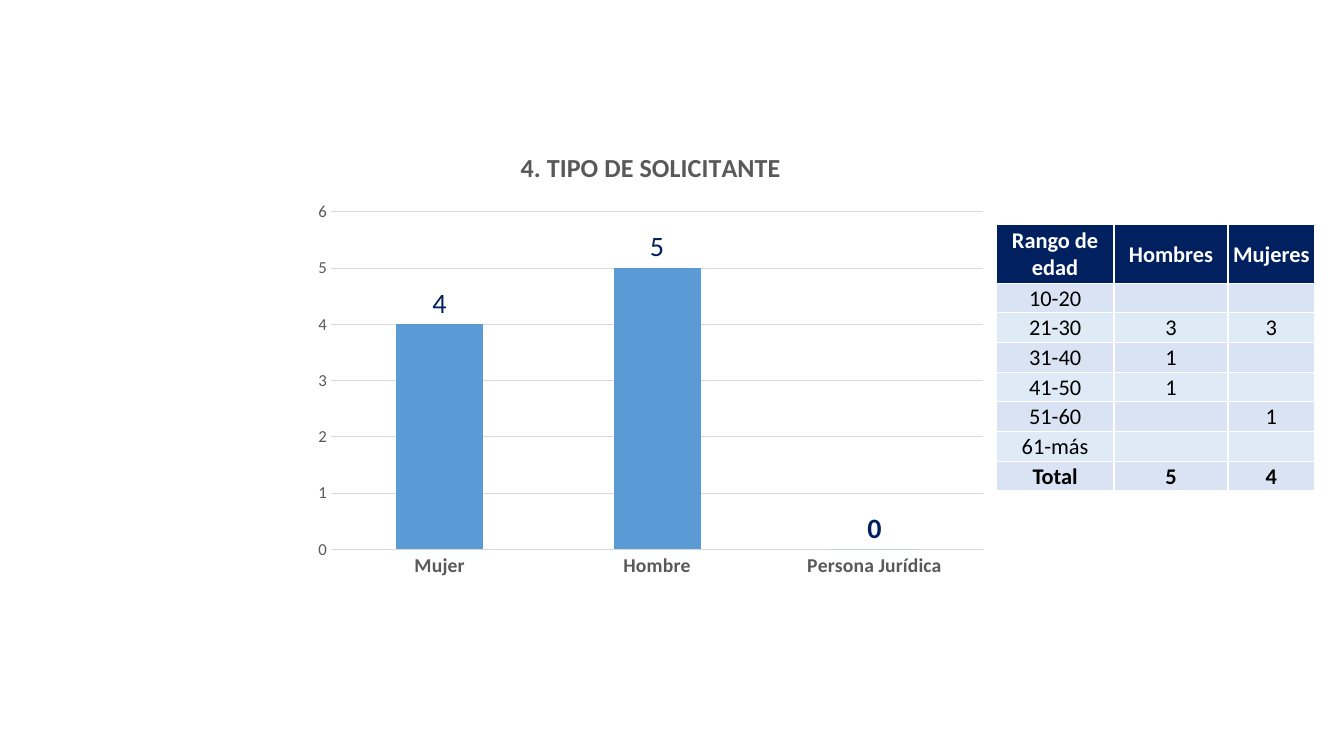
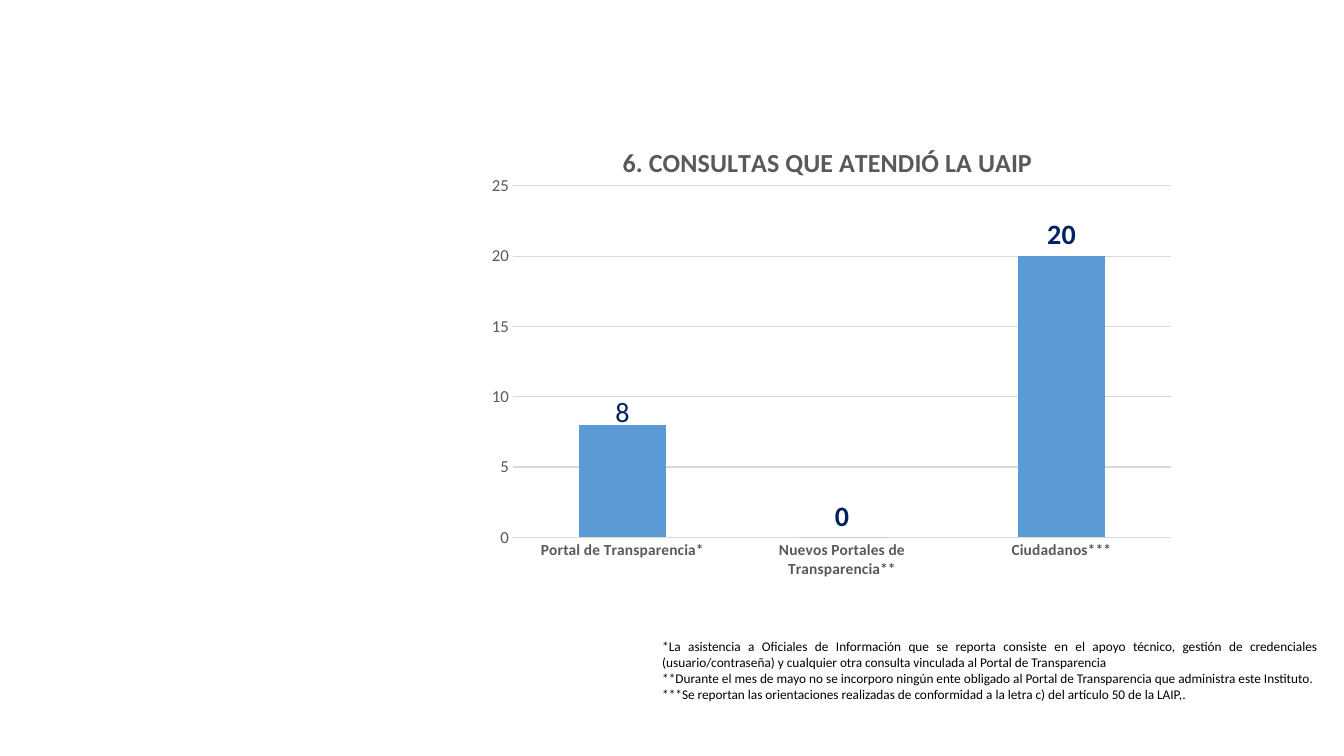
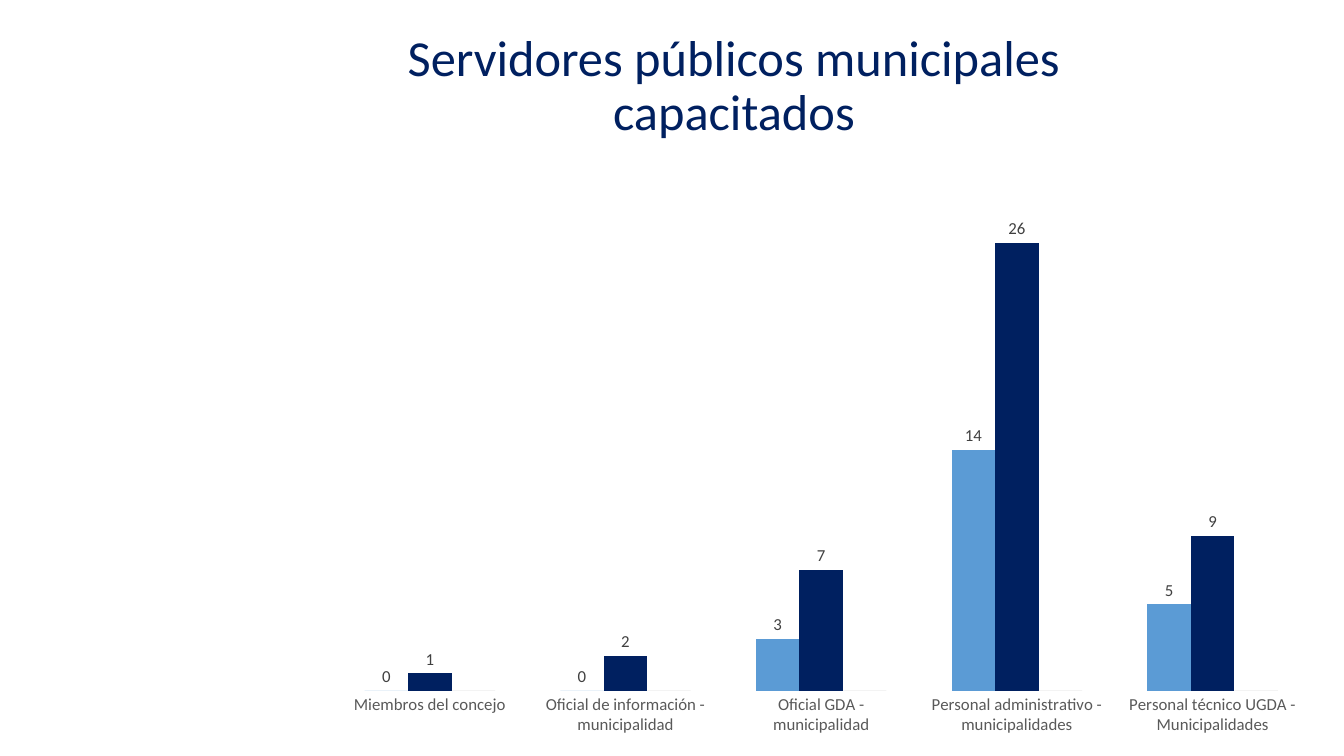
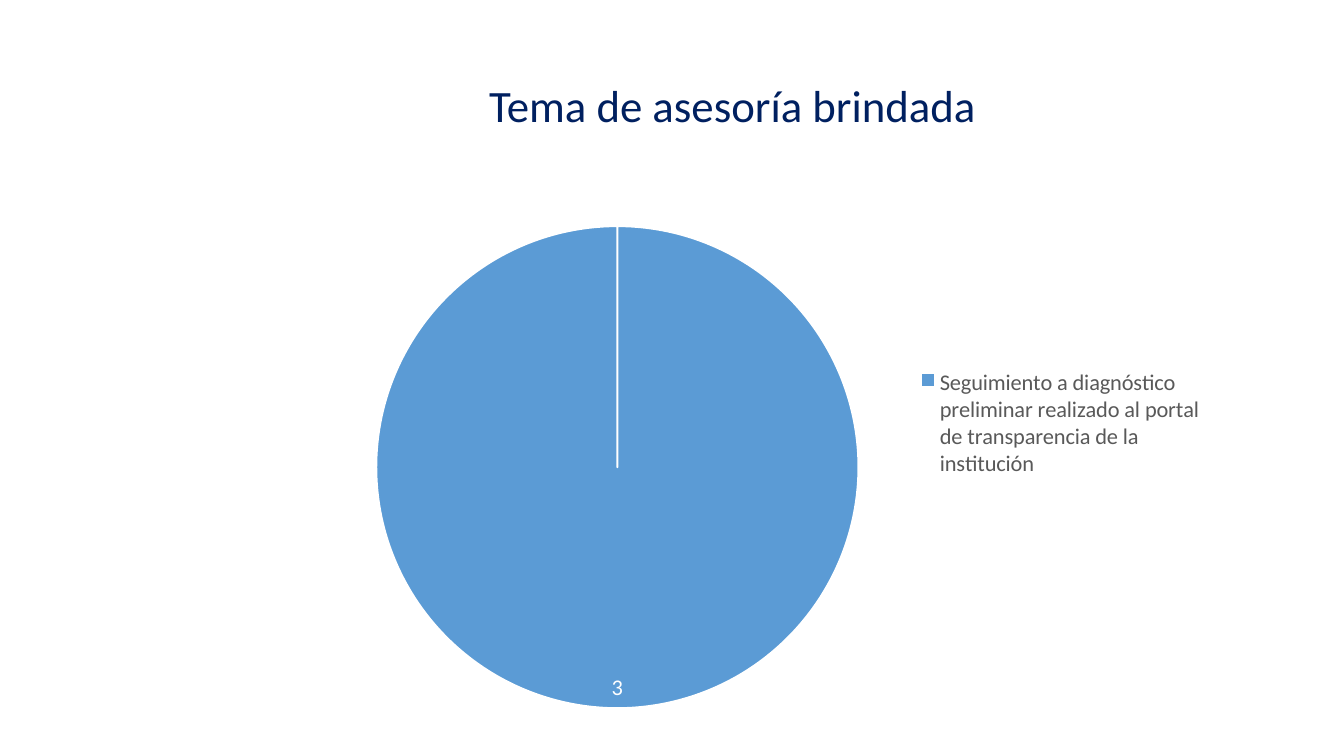
from pptx import Presentation
from pptx.chart.data import CategoryChartData
from pptx.dml.color import RGBColor
from pptx.enum.chart import XL_CHART_TYPE, XL_LABEL_POSITION, XL_LEGEND_POSITION, XL_TICK_MARK
from pptx.enum.text import MSO_ANCHOR, PP_ALIGN
from pptx.oxml import parse_xml
from pptx.oxml.ns import nsdecls, qn
from pptx.util import Inches, Pt

COLUMN = XL_CHART_TYPE.COLUMN_CLUSTERED
PIE = XL_CHART_TYPE.PIE
OUTSIDE = XL_LABEL_POSITION.OUTSIDE_END
BEST_FIT = XL_LABEL_POSITION.BEST_FIT
RIGHT = XL_LEGEND_POSITION.RIGHT
NO_TICK = XL_TICK_MARK.NONE
CENTER = PP_ALIGN.CENTER
JUSTIFY = PP_ALIGN.JUSTIFY
TOP = MSO_ANCHOR.TOP
MIDDLE = MSO_ANCHOR.MIDDLE

FONT = "Calibri"
COLORS = {
    "navy": "002060", "blue": "5B9BD5", "neutral": "A5A5A5", "gray": "595959",
    "dark": "404040", "grid": "D9D9D9", "black": "000000", "white": "FFFFFF",
    "odd_row": "DAE3F3", "even_row": "DEEBF7",
}


class Deck:
    """Holds the shared style and the slide being built."""

    def __init__(self):
        self.presentation = Presentation()
        self.presentation.slide_width = Inches(13.33)
        self.presentation.slide_height = Inches(7.5)
        self.slide = None

    def new_slide(self):
        self.slide = self.presentation.slides.add_slide(self.presentation.slide_layouts[6])

    def color(self, name):
        return RGBColor.from_string(COLORS[name])

    def fill(self, target, name):
        target.fill.solid()
        target.fill.fore_color.rgb = self.color(name)

    def style_font(self, font, size, color, bold=False):
        for key, value in {"name": FONT, "size": Pt(size), "bold": bold}.items():
            setattr(font, key, value)
        font.color.rgb = self.color(color)

    def text(self, box, lines, size, color, align, anchor=TOP, spacing=None):
        frame = self.slide.shapes.add_textbox(*map(Inches, box)).text_frame
        frame.word_wrap = True
        frame.vertical_anchor = anchor
        for index, line in enumerate(lines):
            paragraph = frame.add_paragraph() if index else frame.paragraphs[0]
            paragraph.alignment = align
            paragraph.line_spacing = spacing
            run = paragraph.add_run()
            run.text = line
            self.style_font(run.font, size, color)

    def title(self, box, text, size):
        self.text(box, [text], size, "navy", CENTER, MIDDLE, 0.9)

    def chart(self, kind, box, categories, series):
        data = CategoryChartData()
        data.categories = categories
        for name, values in series:
            data.add_series(name, values)
        chart = self.slide.shapes.add_chart(kind, *map(Inches, box), data).chart
        self.style_font(chart.font, 10, "black")
        chart.has_title = False
        chart.has_legend = False
        return chart

    def labels(self, target, size, color, position, bold=False):
        labels = target.data_labels
        labels.show_value = True
        labels.position = position
        self.style_font(labels.font, size, color, bold)

    def place(self, parent, index, layout):
        previous = parent.find(qn("c:layout"))
        if previous is not None:
            parent.remove(previous)
        values = "".join(f'<c:{key} val="{value}"/>' for key, value in layout.items())
        parent.insert(index, parse_xml(
            f'<c:layout {nsdecls("c")}><c:manualLayout>{values}</c:manualLayout></c:layout>'))

    def place_plot(self, chart, box):
        modes = {"layoutTarget": "inner", "xMode": "edge", "yMode": "edge"}
        self.place(chart._chartSpace.chart.plotArea, 0, modes | dict(zip("xywh", box)))

    def columns(self, box, categories, series, colors, category_size, top, unit, bold=False):
        chart = self.chart(COLUMN, box, categories, series)
        plot = chart.plots[0]
        plot.gap_width = 150
        plot.vary_by_categories = False
        for bars, color in zip(plot.series, colors):
            self.fill(bars.format, color)
            bars.invert_if_negative = False
        for axis in (chart.category_axis, chart.value_axis):
            axis.major_tick_mark = axis.minor_tick_mark = NO_TICK
            axis.format.line.fill.background()
        self.style_font(chart.category_axis.tick_labels.font, category_size, "gray", bold)
        axis = chart.value_axis
        for key, value in {"minimum_scale": 0, "maximum_scale": top, "major_unit": unit}.items():
            setattr(axis, key, value)
        self.style_font(axis.tick_labels.font, 12, "gray")
        line = axis.major_gridlines.format.line
        line.width = Pt(0.75)
        line.color.rgb = self.color("grid")
        return chart

    def titled_columns(self, box, title, categories, values, category_size, top, unit,
                       light_points, drop=0):
        chart = self.columns(box, categories, [(title, values)], ["blue"],
                             category_size, top, unit, True)
        chart.has_title = True
        run = chart.chart_title.text_frame.paragraphs[0].add_run()
        run.text = title
        self.style_font(run.font, 18.6, "gray", True)
        bars = chart.plots[0].series[0]
        self.labels(bars, 20, "navy", OUTSIDE, True)
        for index in light_points:
            label = bars.points[index].data_label
            self.style_font(label.font, 20, "navy")
            label.position = OUTSIDE
            if drop:
                self.place(label._get_or_add_dLbl(), 1, {"x": 0, "y": drop})
        return chart

    def paired_columns(self, box, categories, series, colors, top, unit):
        chart = self.columns(box, categories, series, colors, 12, top, unit)
        chart.value_axis.has_major_gridlines = False
        chart.value_axis.visible = False
        for bars in list(chart.plots[0].series)[:2]:
            self.labels(bars, 12, "dark", OUTSIDE)
        return chart

    def pie(self, box, categories, series, legend_corner):
        chart = self.chart(PIE, box, categories, series)
        wedges = chart.plots[0].series[0]
        wedge = wedges.points[0].format
        self.fill(wedge, "blue")
        wedge.line.color.rgb = self.color("white")
        wedge.line.width = Pt(1.5)
        self.labels(wedges, 16, "white", BEST_FIT)
        chart.has_legend = True
        legend = chart.legend
        legend.position = RIGHT
        legend.include_in_layout = False
        self.style_font(legend.font, 16, "gray")
        modes = {"xMode": "edge", "yMode": "edge"}
        self.place(legend._element, 1, modes | dict(zip("xy", legend_corner)))
        return chart

    def cell(self, cell, text, fill, color, bold):
        margins = {"margin_left": 0.01, "margin_right": 0.01, "margin_top": 0.01, "margin_bottom": 0}
        for key, value in margins.items():
            setattr(cell, key, Inches(value))
        cell.vertical_anchor = MIDDLE
        properties = cell._tc.get_or_add_tcPr()
        for side in "LRTB":
            properties.append(parse_xml(
                f'<a:ln{side} {nsdecls("a")} w="12700"><a:solidFill>'
                f'<a:srgbClr val="{COLORS["white"]}"/></a:solidFill></a:ln{side}>'))
        self.fill(cell, fill)
        paragraph = cell.text_frame.paragraphs[0]
        paragraph.alignment = CENTER
        if text:
            run = paragraph.add_run()
            run.text = text
            self.style_font(run.font, 16, color, bold)
        else:
            paragraph._p.get_or_add_endParaRPr().set("sz", "1600")

    def table(self, box, widths, header_height, rows):
        table = self.slide.shapes.add_table(len(rows), len(widths), *map(Inches, box)).table
        row_height = (box[3] - header_height) / (len(rows) - 1)
        for column, width in zip(table.columns, widths):
            column.width = Inches(width)
        for index, values in enumerate(rows):
            header = index == 0
            table.rows[index].height = Inches(header_height if header else row_height)
            fill = "navy" if header else "odd_row" if index % 2 else "even_row"
            bold = header or index == len(rows) - 1
            for column, text in enumerate(values):
                self.cell(table.cell(index, column), text, fill,
                          "white" if header else "black", bold)


def main():
    deck = Deck()

    deck.new_slide()
    deck.titled_columns((3.02, 1.29, 6.87, 4.53), "4. TIPO DE SOLICITANTE",
                        ["Mujer", "Hombre", "Persona Jurídica"], [4, 5, 0], 14, 6, 1, [0, 1])
    deck.table((9.88, 2.23, 3.16, 2.64), [1.17, 1.13, 0.86], 0.58, [
        ["Rango de edad", "Hombres", "Mujeres"],
        ["10-20", "", ""],
        ["21-30", "3", "3"],
        ["31-40", "1", ""],
        ["41-50", "1", ""],
        ["51-60", "", "1"],
        ["61-más", "", ""],
        ["Total", "5", "4"],
    ])

    deck.new_slide()
    deck.text((6.47, 6.28, 6.7, 0.74), [
        "*La asistencia a Oficiales de Información que se reporta consiste en el apoyo técnico, "
        "gestión de credenciales (usuario/contraseña) y cualquier otra consulta vinculada al "
        "Portal de Transparencia",
        "**Durante el mes de mayo no se incorporo ningún ente obligado al Portal de Transparencia "
        "que administra este Instituto.",
        "***Se reportan las orientaciones realizadas de conformidad a la letra c) del artículo 50 "
        "de la LAIP,.",
    ], 9.5, "black", JUSTIFY)
    consultations = deck.titled_columns(
        (4.66, 1.24, 7.1, 4.65), "6. CONSULTAS QUE ATENDIÓ LA UAIP",
        ["Portal de Transparencia*", "Nuevos Portales de Transparencia**", "Ciudadanos***"],
        [8, 0, 20], 11, 25, 5, [0], 0.02)
    deck.place_plot(consultations, (0.06, 0.13, 0.92, 0.75))

    deck.new_slide()
    deck.title((3.93, 0.27, 6.7, 1.19), "Servidores públicos municipales capacitados", 36)
    trained = deck.paired_columns(
        (3.09, 1.61, 10.11, 5.89),
        ["Miembros del concejo", "Oficial de información - municipalidad",
         "Oficial GDA - municipalidad", "Personal administrativo - municipalidades",
         "Personal técnico UGDA - Municipalidades"],
        [("Hombres", [0, 0, 3, 14, 5]), ("Mujeres", [1, 2, 7, 26, 9]), ("N/D", [0] * 5)],
        ["blue", "navy", "neutral"], 30, 5)
    deck.place_plot(trained, (0.02, 0.02, 0.96, 0.87))

    deck.new_slide()
    advice = deck.pie(
        (3.18, 2.09, 8.92, 5.09),
        ["Seguimiento a diagnóstico preliminar realizado al portal de transparencia "
         "de la institución"],
        [("Asesorías", [3])], (0.66, 0.3))
    deck.place_plot(advice, (0.06, 0.03, 0.54, 0.94))
    deck.title((3.59, 0.46, 7.35, 1.23), "Tema de asesoría brindada", 32)

    deck.presentation.save("out.pptx")


if __name__ == "__main__":
    main()
